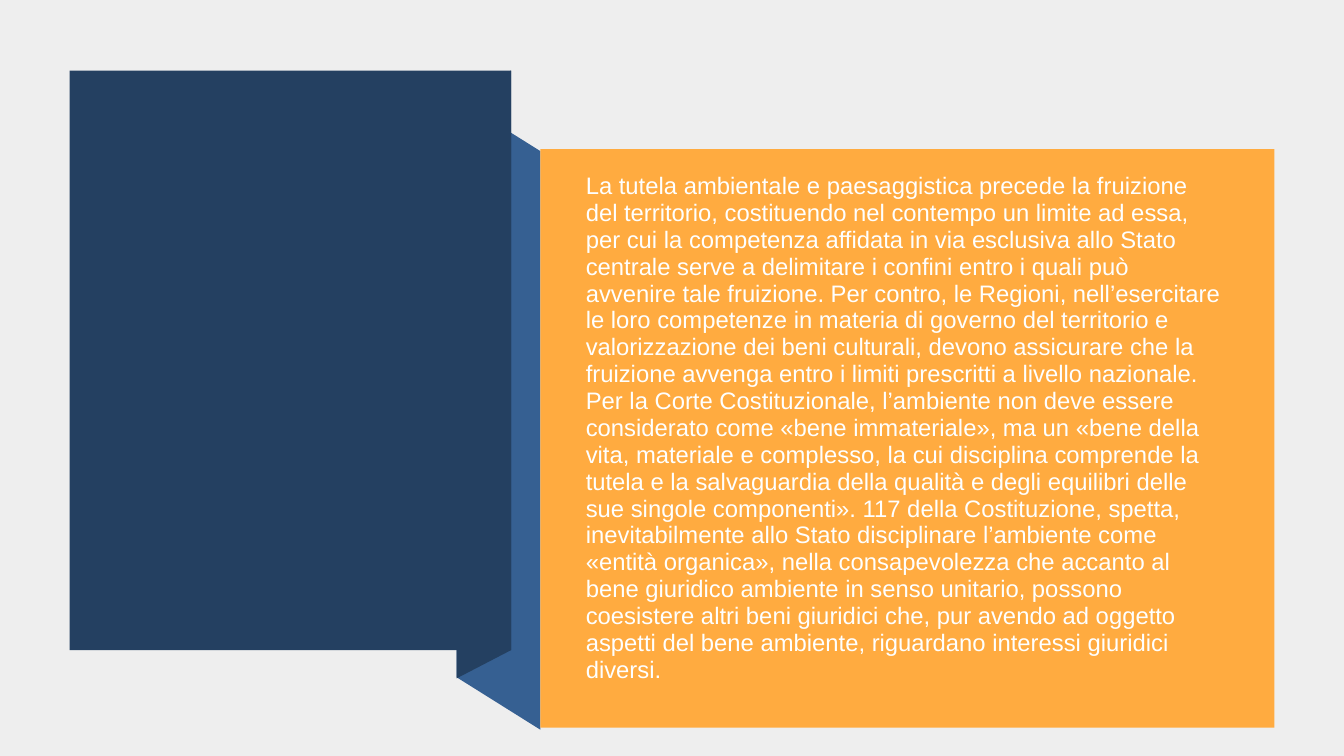
from dataclasses import dataclass
from lxml.etree import SubElement
from pptx import Presentation
from pptx.dml.color import RGBColor
from pptx.enum.shapes import MSO_SHAPE as Preset
from pptx.enum.text import MSO_ANCHOR as Anchor, MSO_AUTO_SIZE as AutoSize, PP_ALIGN as Align
from pptx.oxml.ns import qn
from pptx.util import Inches, Pt


@dataclass(frozen=True)
class Theme:
    backdrop: str = "EEEEEE"
    navy: str = "244061"
    blue: str = "366092"
    orange: str = "FFAB40"
    text: str = "FEFFFF"
    font: str = "Arial"
    body_size: float = 17
    line_spacing: float = 0.94
    space_after: float = 21


@dataclass(frozen=True)
class Box:
    left: float
    top: float
    width: float
    height: float

    @property
    def right(self):
        return self.left + self.width

    def inches(self):
        return [Inches(n) for n in (self.left, self.top, self.width, self.height)]


THEME = Theme()
SLIDE = Box(0, 0, 13.33, 7.5)
NAVY_PANEL = Box(0.69, 0.7, 4.38, 5.75)
ORANGE_PANEL = Box(5.36, 1.48, 7.28, 5.74)
FOLD_LEFT = 4.53
FOLD_DROP = 0.28

SENTENCES = (
    "La tutela ambientale e paesaggistica precede la fruizione del territorio, "
    "costituendo nel contempo un limite ad essa, per cui la competenza affidata in via "
    "esclusiva allo Stato centrale serve a delimitare i confini entro i quali può "
    "avvenire tale fruizione.",
    "Per contro, le Regioni, nell’esercitare le loro competenze "
    "in materia di governo del territorio e valorizzazione dei beni culturali, devono "
    "assicurare che la fruizione avvenga entro i limiti prescritti a livello nazionale.",
    "Per la Corte Costituzionale, l’ambiente non deve essere considerato come «bene "
    "immateriale», ma un «bene della vita, materiale e complesso, la cui disciplina "
    "comprende la tutela e la salvaguardia della qualità e degli equilibri delle sue "
    "singole componenti».",
    "117 della Costituzione, spetta, inevitabilmente allo Stato "
    "disciplinare l’ambiente come «entità organica», nella consapevolezza che accanto al "
    "bene giuridico ambiente in senso unitario, possono coesistere altri beni giuridici "
    "che, pur avendo ad oggetto aspetti del bene ambiente, riguardano interessi giuridici "
    "diversi.",
)


def paint(shape, color):
    shape.shadow.inherit = False
    shape.fill.solid()
    shape.fill.fore_color.rgb = RGBColor.from_string(color)
    shape.line.fill.background()


def add_panel(page, box, color):
    paint(page.shapes.add_shape(Preset.RECTANGLE, *box.inches()), color)


def add_flap(page, left, right, left_top, right_top, height, color):
    outline = page.shapes.build_freeform(Inches(left), Inches(left_top), scale=1.0)
    corners = [(right, right_top), (right, right_top + height), (left, left_top + height)]
    outline.add_line_segments([(Inches(x), Inches(y)) for x, y in corners], close=True)
    paint(outline.convert_to_shape(), color)


def add_ribbon(page, front, back):
    fold_top = front.top + FOLD_DROP
    add_flap(page, FOLD_LEFT, back.left, fold_top, back.top + 0.02, back.height, THEME.blue)
    add_flap(page, FOLD_LEFT, front.right, fold_top, front.top, front.height, THEME.navy)
    add_panel(page, front, THEME.navy)
    add_panel(page, back, THEME.orange)


def place_body(page, panel):
    body = page.placeholders[1]
    box = Box(panel.left + 0.35, panel.top + 0.4, panel.width - 0.77, panel.height - 1)
    body.left, body.top, body.width, body.height = box.inches()
    page.shapes.element.append(body.element)
    frame = body.text_frame
    frame.word_wrap = True
    frame.auto_size = AutoSize.NONE
    frame.vertical_anchor = Anchor.MIDDLE
    frame.margin_left = frame.margin_right = Inches(0.1)
    frame.margin_top = frame.margin_bottom = Inches(0.05)
    para = frame.paragraphs[0]
    para.alignment = Align.LEFT
    para.line_spacing = THEME.line_spacing
    para.space_before = Pt(0)
    para.space_after = Pt(THEME.space_after)
    span = para.add_run()
    span.text = " ".join(SENTENCES)
    span.font.name = THEME.font
    span.font.size = Pt(THEME.body_size)
    span.font.color.rgb = RGBColor.from_string(THEME.text)
    settings = para._p.get_or_add_pPr()
    settings.set("marL", "0")
    settings.set("indent", "0")
    SubElement(settings, qn("a:buNone"))


def build_slide(deck):
    page = deck.slides.add_slide(deck.slide_layouts[1])
    title = page.shapes.title.element
    title.getparent().remove(title)
    add_panel(page, SLIDE, THEME.backdrop)
    add_ribbon(page, NAVY_PANEL, ORANGE_PANEL)
    place_body(page, ORANGE_PANEL)


def main():
    deck = Presentation()
    deck.slide_width, deck.slide_height = Inches(SLIDE.width), Inches(SLIDE.height)
    build_slide(deck)
    deck.save("out.pptx")


if __name__ == "__main__":
    main()
